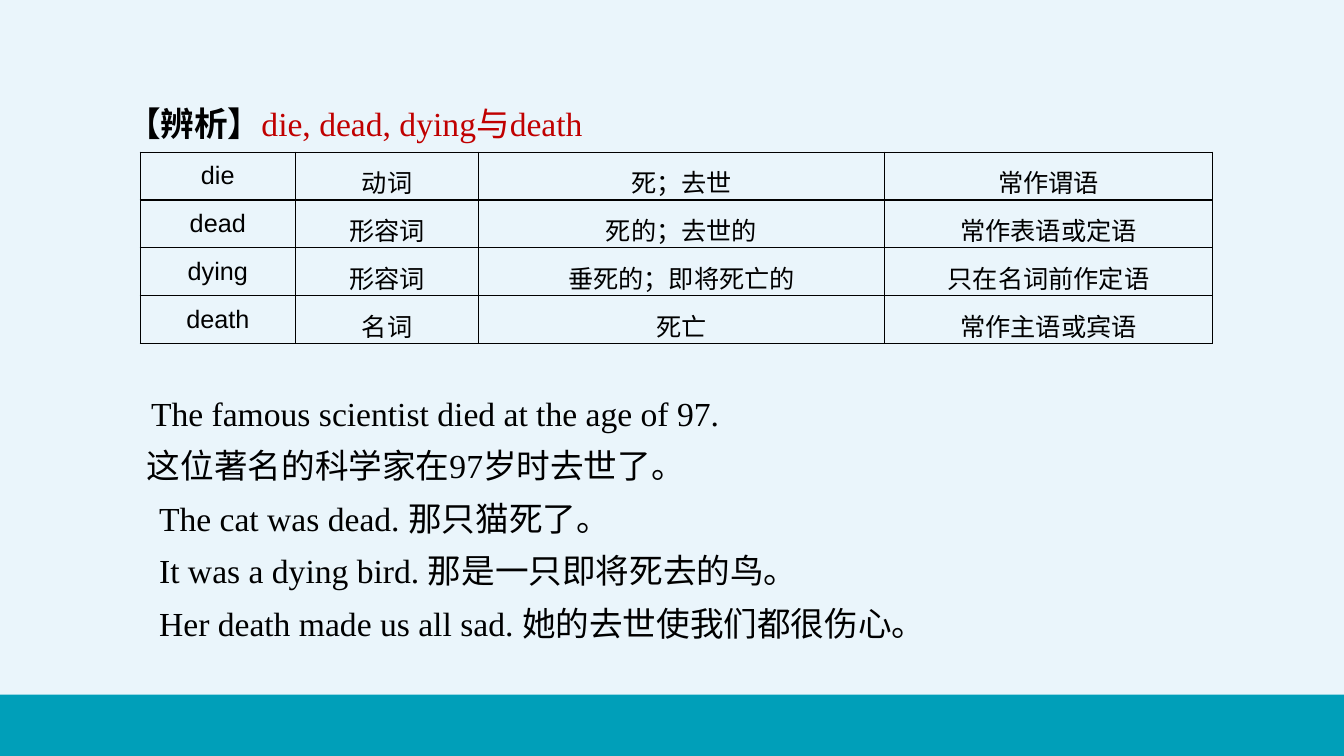
from lxml import etree
from pptx import Presentation
from pptx import util as u
from pptx.dml.color import RGBColor
from pptx.enum import shapes, text
from pptx.oxml import ns

COLORS = {"sky": "EAF5FB", "teal": "009FB9", "red": "C00000", "black": "000000"}
WORDS = [
    ("die", "动词", "死；去世", "常作谓语"),
    ("dead", "形容词", "死的；去世的", "常作表语或定语"),
    ("dying", "形容词", "垂死的；即将死亡的", "只在名词前作定语"),
    ("death", "名词", "死亡", "常作主语或宾语"),
]
COLUMN_WIDTHS = (1.54, 1.82, 4.02, 3.26)
EXAMPLES = [
    (0.04, "The famous scientist died at the age of 97."),
    (0, "这位著名的科学家在97岁时去世了。"),
    (0.12, "The cat was dead. 那只猫死了。"),
    (0.12, "It was a dying bird. 那是一只即将死去的鸟。"),
    (0.12, "Her death made us all sad. 她的去世使我们都很伤心。"),
]


def color(name):
    """Return the named palette colour."""
    return RGBColor.from_string(COLORS[name])


def style(p, font, size, spacing, align=text.PP_ALIGN.LEFT):
    """Format one paragraph."""
    p.alignment = align
    p.line_spacing = spacing
    p.font.name = font
    p.font.size = u.Pt(size)
    p.font.color.rgb = color("black")


def add_backdrop(s, left, top, width, height):
    """Colour the background and add the footer bar."""
    s.background.fill.solid()
    s.background.fill.fore_color.rgb = color("sky")
    bar = s.shapes.add_shape(shapes.MSO_SHAPE.RECTANGLE, u.Inches(left), u.Inches(top),
                             u.Inches(width), u.Inches(height))
    bar.shadow.inherit = False
    bar.fill.solid()
    bar.fill.fore_color.rgb = color("teal")
    bar.line.fill.background()


def add_heading(s, left, top, width, height):
    """Place the two-colour heading in the title placeholder."""
    sp = s.shapes.title
    sp.left, sp.top, sp.width, sp.height = map(u.Inches, (left, top, width, height))
    tf = sp.text_frame
    tf.auto_size = text.MSO_AUTO_SIZE.NONE
    tf.vertical_anchor = text.MSO_ANCHOR.TOP
    p = tf.paragraphs[0]
    style(p, "Times New Roman", 24, 1.5)
    for words, name, bold in (("【辨析】", "black", True),
                              ("die, dead, dying与death", "red", False)):
        r = p.add_run()
        r.text = words
        r.font.bold = bold
        r.font.color.rgb = color(name)


def add_borders(cell):
    """Draw a thin black line on every side of a cell."""
    tc_pr = cell._tc.get_or_add_tcPr()
    for side in ("lnL", "lnR", "lnT", "lnB"):
        ln = etree.SubElement(tc_pr, ns.qn(f"a:{side}"), w=str(u.Pt(1)))
        fill = etree.SubElement(ln, ns.qn("a:solidFill"))
        etree.SubElement(fill, ns.qn("a:srgbClr"), val=COLORS["black"])


def add_word_table(s, left, top, width, height):
    """Add the table comparing the four words."""
    table = s.shapes.add_table(len(WORDS), len(COLUMN_WIDTHS), u.Inches(left), u.Inches(top),
                               u.Inches(width), u.Inches(height)).table
    table.first_row = table.horz_banding = False
    for column, share in zip(table.columns, COLUMN_WIDTHS):
        column.width = u.Inches(width * share / sum(COLUMN_WIDTHS))
    for row, words in zip(table.rows, WORDS):
        for cell, word in zip(row.cells, words):
            add_borders(cell)
            cell.fill.background()
            cell.margin_top, cell.margin_bottom = u.Inches(0.04), 0
            cell.text = word
            style(cell.text_frame.paragraphs[0], "Arial", 18, 1.2, text.PP_ALIGN.CENTER)


def add_examples(s, left, top, width, height):
    """Add the example sentences with their translations."""
    tf = s.shapes.add_textbox(u.Inches(left), u.Inches(top),
                              u.Inches(width), u.Inches(height)).text_frame
    tf.word_wrap = True
    for i, (indent, sentence) in enumerate(EXAMPLES):
        p = tf.add_paragraph() if i else tf.paragraphs[0]
        p.text = sentence
        p._p.get_or_add_pPr().set("marL", str(u.Inches(indent)))
        style(p, "Times New Roman", 24, 1.3)


def main():
    """Build and save the slide."""
    prs = Presentation()
    prs.slide_width, prs.slide_height = u.Inches(13.33), u.Inches(7.5)
    s = prs.slides.add_slide(prs.slide_layouts[5])
    add_backdrop(s, 0, 6.89, 13.33, 0.61)
    add_heading(s, 1.16, 0.77, 10.87, 0.7)
    add_word_table(s, 1.39, 1.51, 10.64, 1.89)
    add_examples(s, 1.36, 3.73, 10.67, 2.71)
    prs.save("out.pptx")


if __name__ == "__main__":
    main()
